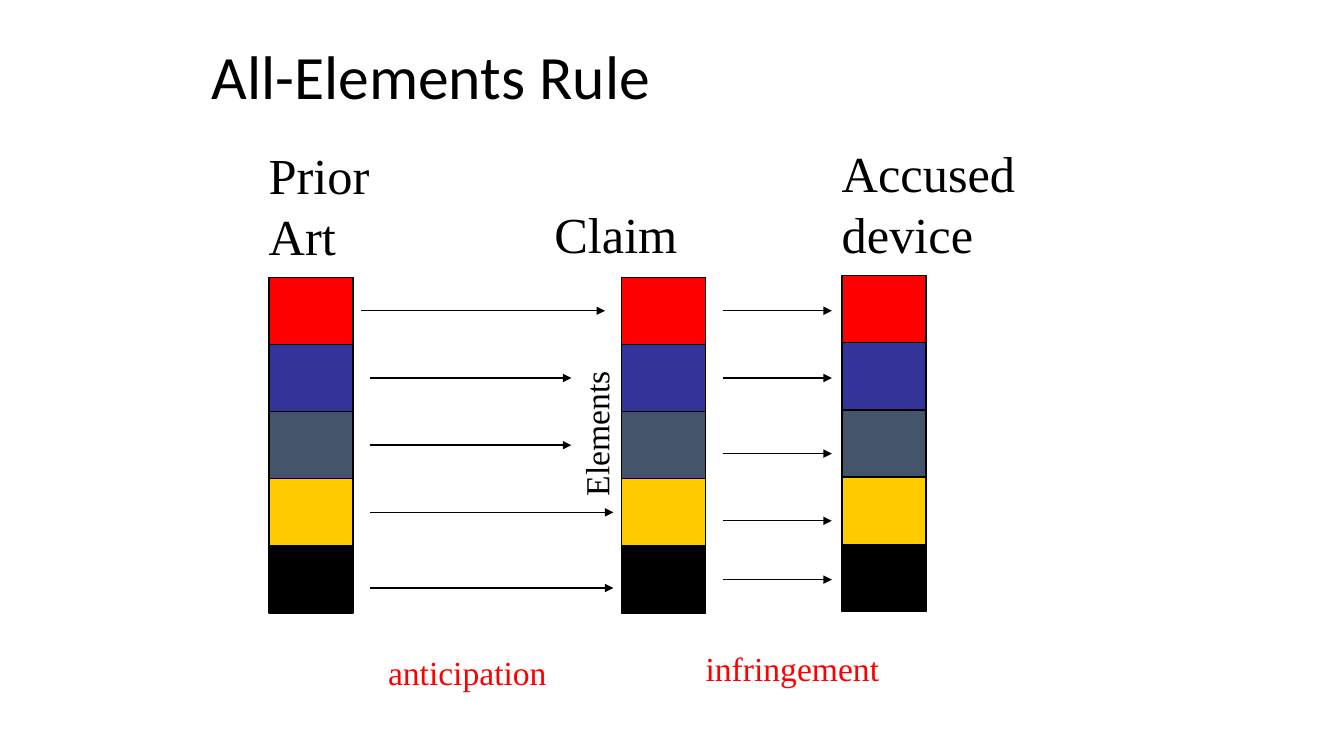
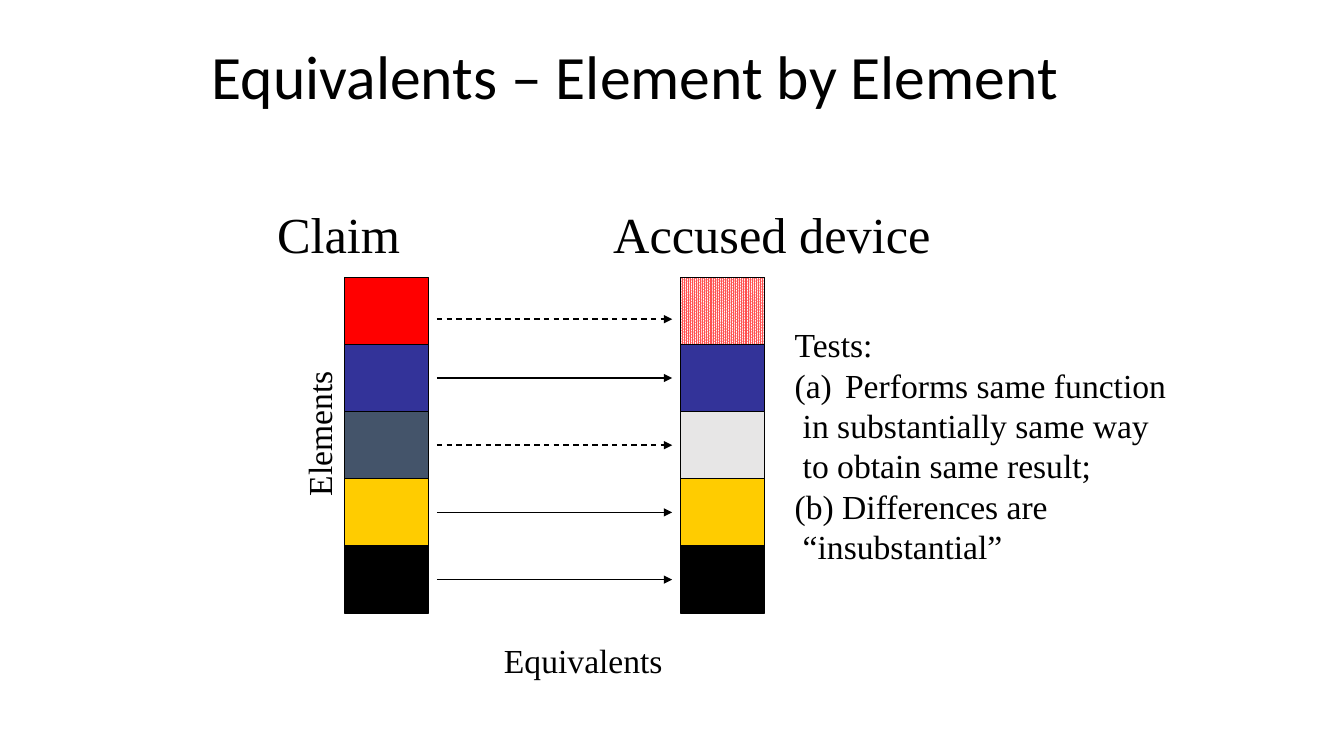
from dataclasses import dataclass

from lxml.etree import SubElement
from pptx import Presentation
from pptx.dml.color import RGBColor
from pptx.enum.dml import MSO_LINE, MSO_PATTERN
from pptx.enum.shapes import MSO_CONNECTOR, MSO_SHAPE
from pptx.enum.text import MSO_ANCHOR, MSO_AUTO_SIZE, PP_ALIGN
from pptx.oxml.ns import qn
from pptx.util import Inches, Pt


@dataclass(frozen=True)
class Theme:
    black: RGBColor = RGBColor.from_string("000000")
    white: RGBColor = RGBColor.from_string("FFFFFF")
    red: RGBColor = RGBColor.from_string("FF0000")
    faded_red: RGBColor = RGBColor.from_string("FF5050")
    blue: RGBColor = RGBColor.from_string("333399")
    slate: RGBColor = RGBColor.from_string("44546A")
    pale_gray: RGBColor = RGBColor.from_string("E7E6E6")
    yellow: RGBColor = RGBColor.from_string("FFCC00")
    title_font: str = "Calibri"
    body_font: str = "Times New Roman"
    title_size: Pt = Pt(44)
    heading_size: Pt = Pt(36)
    label_size: Pt = Pt(24)
    line_width: Pt = Pt(1)


THEME = Theme()
ELEMENT_COLORS = (THEME.red, THEME.blue, THEME.slate, THEME.yellow, THEME.black)
BLOCK_WIDTH, BLOCK_HEIGHT = 10, 8
STACK_TOP = 33
ARROW_ROWS = (37, 45, 53, 61, 69)


def grid(cells):
    """Convert grid cells, twelve to the inch, to a length."""
    return Inches(cells / 12)


def style_font(font, name, size, color):
    font.name, font.size = name, size
    font.color.rgb = color


def add_titled_slide(deck, title):
    page = deck.slides.add_slide(deck.slide_layouts[5])
    box = page.shapes.title
    box.left, box.top, box.width, box.height = map(grid, (24, 2, 111, 15))
    frame = box.text_frame
    frame.text = title
    frame.auto_size = MSO_AUTO_SIZE.NONE
    frame.vertical_anchor = MSO_ANCHOR.MIDDLE
    para = frame.paragraphs[0]
    para.alignment = PP_ALIGN.LEFT
    para.line_spacing = 0.9
    style_font(para.runs[0].font, THEME.title_font, THEME.title_size, THEME.black)
    return page


def add_label(page, text, area, size=THEME.label_size, color=THEME.black, rotation=0):
    box = page.shapes.add_textbox(*map(grid, area))
    box.rotation = rotation
    frame = box.text_frame
    frame.word_wrap = False
    frame.auto_size = MSO_AUTO_SIZE.SHAPE_TO_FIT_TEXT
    frame.text = text
    for para in frame.paragraphs:
        for span in para.runs:
            style_font(span.font, THEME.body_font, size, color)
    return box


def add_heading(page, text, area):
    return add_label(page, text, area, THEME.heading_size)


def add_stack(page, left, top=STACK_TOP, colors=ELEMENT_COLORS):
    """Pile one block per element and return the blocks from the top down."""
    blocks = []
    for row, color in enumerate(colors):
        area = (left, top + row * BLOCK_HEIGHT, BLOCK_WIDTH, BLOCK_HEIGHT)
        block = page.shapes.add_shape(MSO_SHAPE.RECTANGLE, *map(grid, area))
        block.shadow.inherit = False
        block.fill.solid()
        block.fill.fore_color.rgb = color
        block.line.color.rgb = THEME.black
        block.line.width = THEME.line_width
        blocks.append(block)
    return blocks


def add_claim(page, left):
    add_heading(page, "Claim", (left - 9.2, 23.6, 17.6, 8.4))
    add_stack(page, left)
    add_label(page, "Elements", (left - 11.7, 48.6, 17.3, 6), rotation=270)


def add_arrow(page, start, end, row, dashed=False):
    arrow = page.shapes.add_connector(
        MSO_CONNECTOR.STRAIGHT, *map(grid, (start, row, end, row)))
    arrow.line.color.rgb = THEME.black
    arrow.line.width = THEME.line_width
    if dashed:
        arrow.line.dash_style = MSO_LINE.DASH
    properties = arrow.element.spPr
    SubElement(properties.find(qn("a:ln")), qn("a:tailEnd"), type="triangle")
    SubElement(properties, qn("a:effectLst"))


def indent(para, margin, first_line):
    properties = para._p.get_or_add_pPr()
    properties.set("marL", str(Inches(margin)))
    properties.set("indent", str(Inches(first_line)))
    return properties


def add_tests(page):
    lines = ("Tests:", "Performs same function", "in substantially same way",
             "to obtain same result;", "(b) Differences are", "“insubstantial”")
    box = add_label(page, "\n".join(lines), (93.4, 38, 47, 30.2))
    continued = (2, 3, 5)
    for number, para in enumerate(box.text_frame.paragraphs):
        properties = indent(para, 0.5, -0.42 if number in continued else -0.5)
        if number == 1:
            SubElement(properties, qn("a:buFontTx"))
            SubElement(properties, qn("a:buAutoNum"), type="alphaLcParenBoth")


def build_all_elements(deck):
    page = add_titled_slide(deck, "All-Elements Rule")
    add_claim(page, 74)
    add_heading(page, "Accused\ndevice", (99, 16.35, 24.8, 15.6))
    add_stack(page, 100.2, STACK_TOP - 0.2)
    for row in (37, 45, 54, 62, 69):
        add_arrow(page, 86, 99, row)
    add_label(page, "infringement", (82.8, 76.6, 24, 6), color=THEME.red)

    add_heading(page, "Prior\nArt", (30.8, 16.6, 14.6, 15.6))
    add_stack(page, 32)
    spans = ((43, 72), (44, 68), (44, 68), (44, 73), (44, 73))
    for (start, end), row in zip(spans, (37, 45, 53, 61, 70)):
        add_arrow(page, start, end, row)
    add_label(page, "anticipation", (45, 77, 22, 6), color=THEME.red)


def build_equivalents(deck):
    page = add_titled_slide(deck, "Equivalents – Element by Element")
    add_claim(page, 41)
    add_heading(page, "Accused device", (71.8, 23.6, 41, 8.4))
    colors = (THEME.red, THEME.blue, THEME.pale_gray, THEME.yellow, THEME.black)
    equivalent = add_stack(page, 81, colors=colors)[0].fill
    equivalent.patterned()
    equivalent.pattern = MSO_PATTERN.PERCENT_90
    equivalent.fore_color.rgb = THEME.faded_red
    equivalent.back_color.rgb = THEME.white
    for number, row in enumerate((38, *ARROW_ROWS[1:])):
        add_arrow(page, 52, 80, row, dashed=number in (0, 2))
    add_label(page, "Equivalents", (58.8, 75.6, 22, 6))
    add_tests(page)


def main():
    deck = Presentation()
    deck.slide_width, deck.slide_height = Inches(13.33), Inches(7.5)
    build_all_elements(deck)
    build_equivalents(deck)
    deck.save("out.pptx")


if __name__ == "__main__":
    main()
